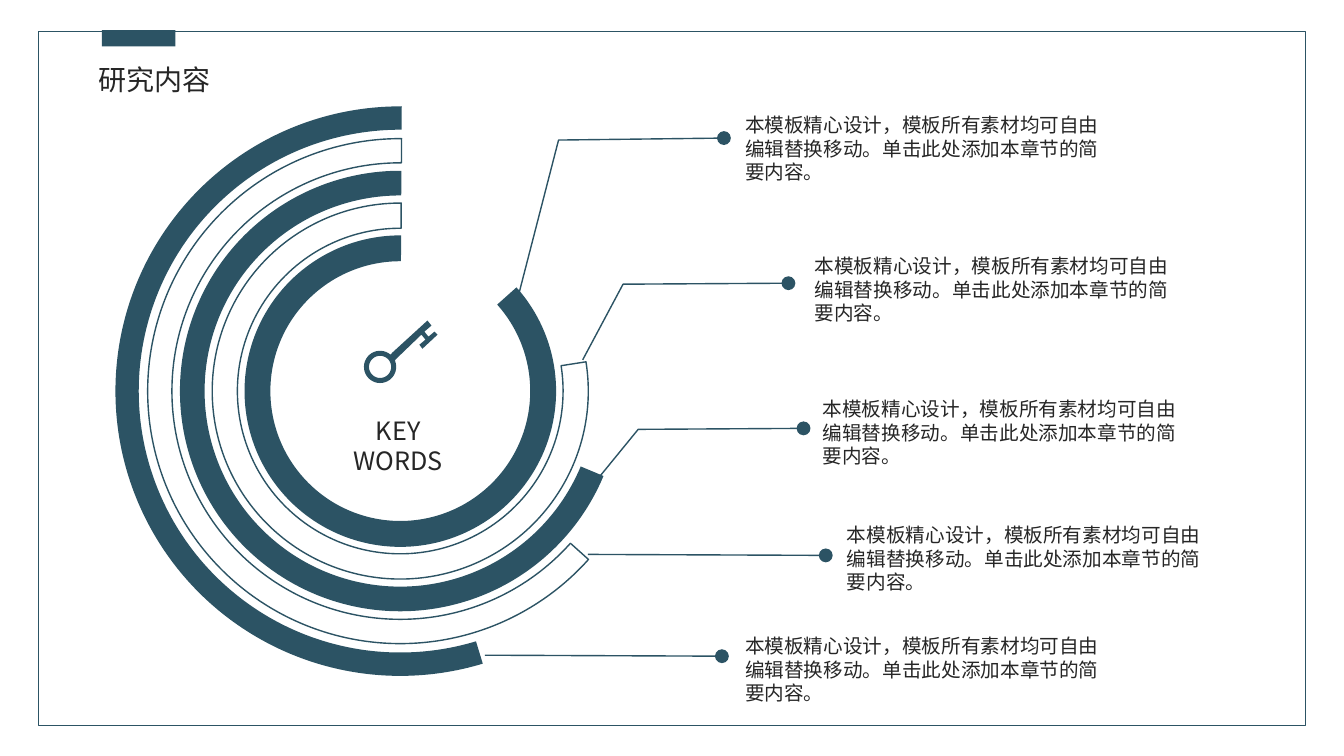
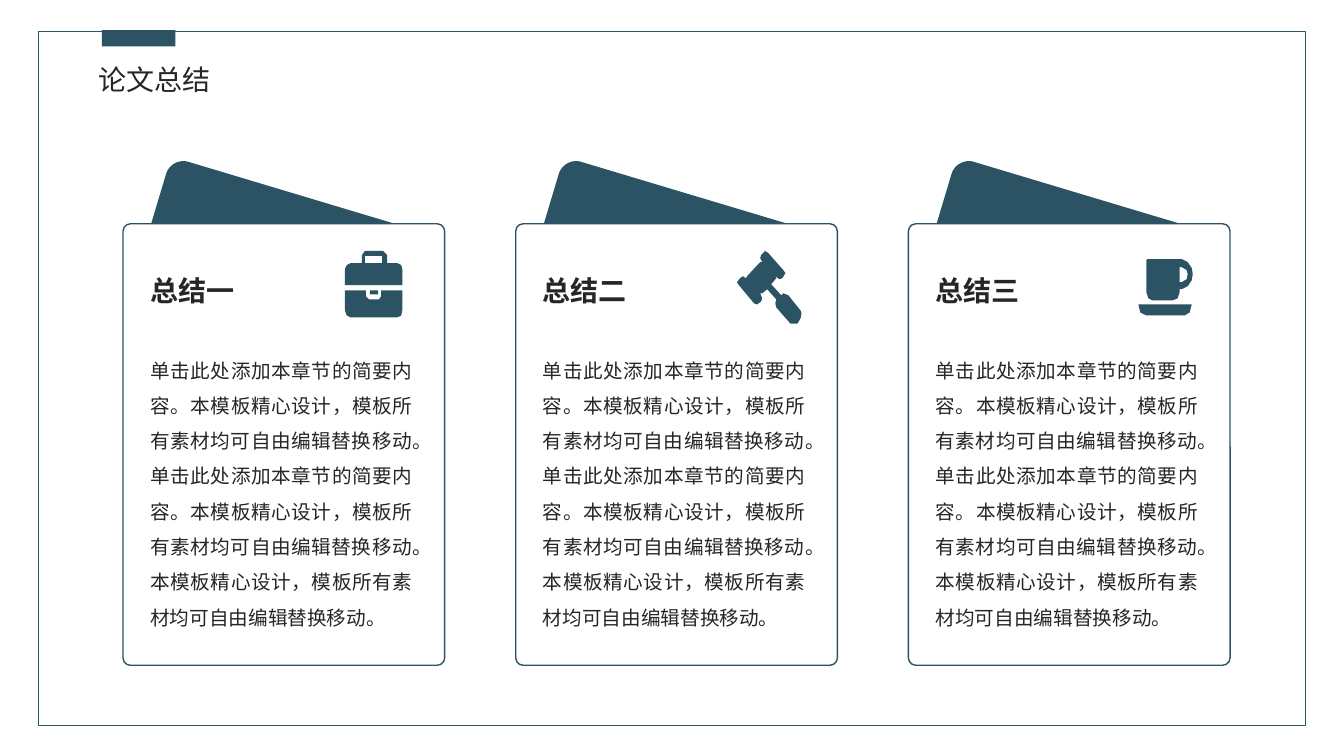
from dataclasses import dataclass
from math import cos, radians, sin

from lxml.etree import SubElement
from pptx import Presentation
from pptx.dml.color import RGBColor
from pptx.enum.shapes import MSO_CONNECTOR as Connector, MSO_SHAPE as Preset
from pptx.enum.text import MSO_ANCHOR as Anchor, PP_ALIGN as Align
from pptx.oxml.ns import qn
from pptx.util import Inches, Pt


@dataclass(frozen=True)
class Theme:
    """Colours, typeface and type sizes shared by both slides."""

    accent: RGBColor = RGBColor(0x2C, 0x53, 0x64)
    ink: RGBColor = RGBColor(0x26, 0x26, 0x26)
    paper: RGBColor = RGBColor(0xFF, 0xFF, 0xFF)
    font: str = "Noto Sans CJK SC"
    title: float = 20
    key: float = 18
    body: float = 14
    line: float = 1
    tight: float = 1.2
    loose: float = 1.8


THEME = Theme()

DESIGN = "本模板精心设计，模板所有素材均可自由编辑替换移动。"
BRIEF = "单击此处添加本章节的简要内容。"
CALLOUT_TEXT = DESIGN + BRIEF
CARD_TEXT = (BRIEF + DESIGN) * 2 + DESIGN

RING_CENTER = (3.97, 3.88)
RING_TOP = 270.3
RINGS = [
    (5.65, 73.16, 0.041, True),
    (5.01, 41.81, 0.048, False),
    (4.37, 22.69, 0.056, True),
    (3.73, 351.05, 0.067, False),
    (3.09, 318.23, 0.083, True),
]

CALLOUTS = [
    ([(5.14, 2.94), (5.54, 1.39), (7.18, 1.37)], (7.39, 1.12)),
    ([(5.78, 3.57), (6.18, 2.82), (7.82, 2.81)], (8.08, 2.52)),
    ([(5.93, 4.75), (6.33, 4.26), (7.97, 4.25)], (8.16, 3.94)),
    ([(5.83, 5.5), (8.19, 5.51)], (8.4, 5.19)),
    ([(4.81, 6.5), (7.16, 6.51)], (7.39, 6.29)),
]

FIRST_CARD, LAST_CARD, CARD_TOP = 1.22, 9.01, 2.22
CARD_WIDTH, CARD_HEIGHT = 3.19, 4.38

BRIEFCASE = [
    [(3.42, 2.83), (3.42, 2.67), (3.44, 2.63), (3.48, 2.61), (3.59, 2.61),
     (3.59, 2.53), (3.62, 2.49), (3.8, 2.49), (3.84, 2.53), (3.84, 2.61),
     (3.94, 2.61), (3.98, 2.63), (3.99, 2.67), (3.99, 2.83)],
    [(3.42, 2.88), (3.63, 2.88), (3.63, 2.94), (3.66, 2.97), (3.76, 2.97),
     (3.78, 2.94), (3.78, 2.88), (3.99, 2.88), (3.99, 3.08), (3.98, 3.13),
     (3.94, 3.15), (3.48, 3.15), (3.44, 3.13), (3.42, 3.08)],
    [(3.62, 2.54), (3.62, 2.61), (3.79, 2.61), (3.79, 2.54)],
    [(3.67, 2.88), (3.75, 2.88), (3.75, 2.92), (3.67, 2.92)],
]
GAVEL = [
    [(7.94, 3.16), (7.91, 3.21), (7.84, 3.21), (7.7, 3.05), (7.69, 3.01),
     (7.7, 2.97), (7.61, 2.87), (7.56, 2.91), (7.54, 2.91), (7.56, 2.96),
     (7.55, 2.99), (7.51, 3.02), (7.48, 3.01), (7.33, 2.83), (7.31, 2.8),
     (7.34, 2.76), (7.37, 2.74), (7.41, 2.77), (7.4, 2.76), (7.41, 2.74),
     (7.54, 2.6), (7.56, 2.6), (7.54, 2.56), (7.55, 2.53), (7.59, 2.49),
     (7.62, 2.51), (7.77, 2.68), (7.79, 2.71), (7.76, 2.76), (7.73, 2.77),
     (7.69, 2.74), (7.7, 2.76), (7.65, 2.82), (7.75, 2.93), (7.77, 2.91),
     (7.82, 2.93), (7.94, 3.08), (7.95, 3.11)],
]
CUP = [
    [(11.29, 3.02), (11.82, 3.02), (11.8, 3.1), (11.75, 3.13), (11.37, 3.13),
     (11.31, 3.1)],
    [(11.37, 2.58), (11.38, 2.57), (11.72, 2.57), (11.78, 2.6), (11.82, 2.66),
     (11.83, 2.72), (11.82, 2.78), (11.78, 2.84), (11.72, 2.87), (11.7, 2.87),
     (11.7, 2.9), (11.68, 2.96), (11.63, 2.98), (11.43, 2.98), (11.39, 2.96),
     (11.37, 2.9)],
    [(11.72, 2.65), (11.7, 2.65), (11.7, 2.8), (11.72, 2.8), (11.77, 2.77),
     (11.78, 2.72), (11.77, 2.68)],
]
CARDS = [("总结一", BRIEFCASE), ("总结二", GAVEL), ("总结三", CUP)]


def arc_points(center, radius, start, end, steps=36):
    """Return points along a circular arc, with angles clockwise from the right."""
    angles = [radians(start + (end - start) * i / steps) for i in range(steps + 1)]
    return [(center[0] + radius * cos(a), center[1] + radius * sin(a)) for a in angles]


def paint(shape, fill=None, line=None):
    """Set the fill and outline of a shape and drop its shadow."""
    shape.shadow.inherit = False
    if fill is None:
        shape.fill.background()
    else:
        shape.fill.solid()
        shape.fill.fore_color.rgb = fill
    if line is None:
        shape.line.fill.background()
    else:
        shape.line.color.rgb = line
        shape.line.width = Pt(THEME.line)
    return shape


def add_preset(page, preset, left, top, width, height, fill=None, line=None):
    """Add a painted preset shape."""
    shape = page.shapes.add_shape(
        preset, Inches(left), Inches(top), Inches(width), Inches(height))
    return paint(shape, fill, line)


def add_outline(page, contours, closed=True):
    """Add one freeform made of one or more contours."""
    builder = None
    for contour in contours:
        first, *rest = [(Inches(x), Inches(y)) for x, y in contour]
        if builder is None:
            builder = page.shapes.build_freeform(*first)
        else:
            builder.move_to(*first)
        builder.add_line_segments(rest, close=closed)
    shape = builder.convert_to_shape()
    return paint(shape, THEME.accent) if closed else paint(shape, line=THEME.accent)


def add_text(page, place, lines, size, spacing=THEME.tight, align=Align.LEFT,
             bold=False, anchor=Anchor.TOP):
    """Add a text box without margins, one paragraph for each line."""
    box = page.shapes.add_textbox(*map(Inches, place))
    frame = box.text_frame
    frame.word_wrap = True
    frame.vertical_anchor = anchor
    frame.margin_left = frame.margin_right = frame.margin_top = frame.margin_bottom = 0
    frame.text = "\n".join(lines)
    for para in frame.paragraphs:
        para.alignment = align
        para.line_spacing = Pt(size * spacing)
        font = para.font
        font.size, font.bold, font.name = Pt(size), bold, THEME.font
        font.color.rgb = THEME.ink
        properties = para._p.get_or_add_pPr().find(qn("a:defRPr"))
        SubElement(properties, qn("a:ea"), typeface=THEME.font)


def add_leader(page, points):
    """Add a straight or bent leader line that ends in a large dot."""
    if len(points) == 2:
        ends = [Inches(value) for point in points for value in point]
        leader = page.shapes.add_connector(Connector.STRAIGHT, *ends)
        leader.line.color.rgb = THEME.accent
        leader.line.width = Pt(THEME.line)
        SubElement(leader.element.spPr, qn("a:effectLst"))
    else:
        leader = add_outline(page, [points], closed=False)
    outline = leader.element.spPr.find(qn("a:ln"))
    SubElement(outline, qn("a:tailEnd"), type="oval", w="lg", len="lg")


def add_ring(page, diameter, end, ratio, solid):
    """Add one concentric arc running from its end angle to the top."""
    left, top = (middle - diameter / 2 for middle in RING_CENTER)
    fill, line = (THEME.accent, None) if solid else (THEME.paper, THEME.accent)
    ring = add_preset(page, Preset.BLOCK_ARC, left, top, diameter, diameter, fill, line)
    for index, value in enumerate((end * 0.6, RING_TOP * 0.6, ratio)):
        ring.adjustments[index] = value
    if not solid:
        color = ring.element.spPr.find(qn("a:solidFill"))[0]
        SubElement(color, qn("a:alpha"), val="33000")


def add_key(page):
    """Add the key symbol."""
    center = (3.77, 3.64)
    blade = [(3.89, 3.5), (4.24, 3.18), (4.28, 3.23), (4.21, 3.29), (4.25, 3.34),
             (4.31, 3.29), (4.34, 3.32), (4.19, 3.46), (4.16, 3.42), (4.22, 3.37),
             (4.18, 3.32), (3.92, 3.57)]
    bow = arc_points(center, 0.16, -20, 311)
    add_outline(page, [blade + bow, arc_points(center, 0.11, 0, 360)])


def add_card(page, left, heading, icon):
    """Add one summary card with its tilted tab, heading, icon and text."""
    x, y, radius = left + 0.23, 1.9, 0.18
    tab = add_outline(page, [
        [(x, y + 1.35)]
        + arc_points((x + radius, y + radius), radius, 180, 270)
        + arc_points((x + 2.6 - radius, y + radius), radius, 270, 360)])
    tab.rotation = 16.7
    card = add_preset(page, Preset.ROUNDED_RECTANGLE, left, CARD_TOP, CARD_WIDTH,
                      CARD_HEIGHT, THEME.paper, THEME.accent)
    card.adjustments[0] = 0.023
    add_outline(page, icon)
    inner = left + 0.27
    add_text(page, (inner, 2.71, 1.6, 0.34), [heading], THEME.title, bold=True)
    add_text(page, (inner, 3.44, 2.6, 2.8), [CARD_TEXT], THEME.body,
             THEME.loose, Align.JUSTIFY)


def add_frame(page):
    """Put the border and the title tab on the layout of the page."""
    border = add_preset(page, Preset.RECTANGLE, 0.38, 0.31, 12.57, 6.89,
                        line=THEME.accent)
    band = add_preset(page, Preset.RECTANGLE, 1.01, 0.3, 0.73, 0.16, THEME.accent)
    for shape in (border, band):
        page.slide_layout.shapes.element.append(shape.element)


def add_page(deck, title):
    """Add a blank slide with its title."""
    page = deck.slides.add_slide(deck.slide_layouts[6])
    add_text(page, (0.98, 0.57, 1.84, 0.44), [title], THEME.title,
             align=Align.JUSTIFY, anchor=Anchor.MIDDLE)
    return page


def build_content(page):
    """Draw the rings, the key and the callouts."""
    for ring in RINGS:
        add_ring(page, *ring)
    add_key(page)
    add_text(page, (3.2, 4.12, 1.5, 0.6), ["KEY", "WORDS"], THEME.key,
             align=Align.CENTER)
    for points, (left, top) in CALLOUTS:
        add_leader(page, points)
        add_text(page, (left, top, 3.6, 0.7), [CALLOUT_TEXT], THEME.body)


def build_summary(page):
    """Draw the row of summary cards."""
    pitch = (LAST_CARD - FIRST_CARD) / (len(CARDS) - 1)
    for index, (heading, icon) in enumerate(CARDS):
        add_card(page, FIRST_CARD + index * pitch, heading, icon)


def main():
    """Build and save the deck."""
    deck = Presentation()
    deck.slide_width, deck.slide_height = Inches(13.33), Inches(7.5)
    content = add_page(deck, "研究内容")
    add_frame(content)
    build_content(content)
    build_summary(add_page(deck, "论文总结"))
    deck.save("out.pptx")


if __name__ == "__main__":
    main()
